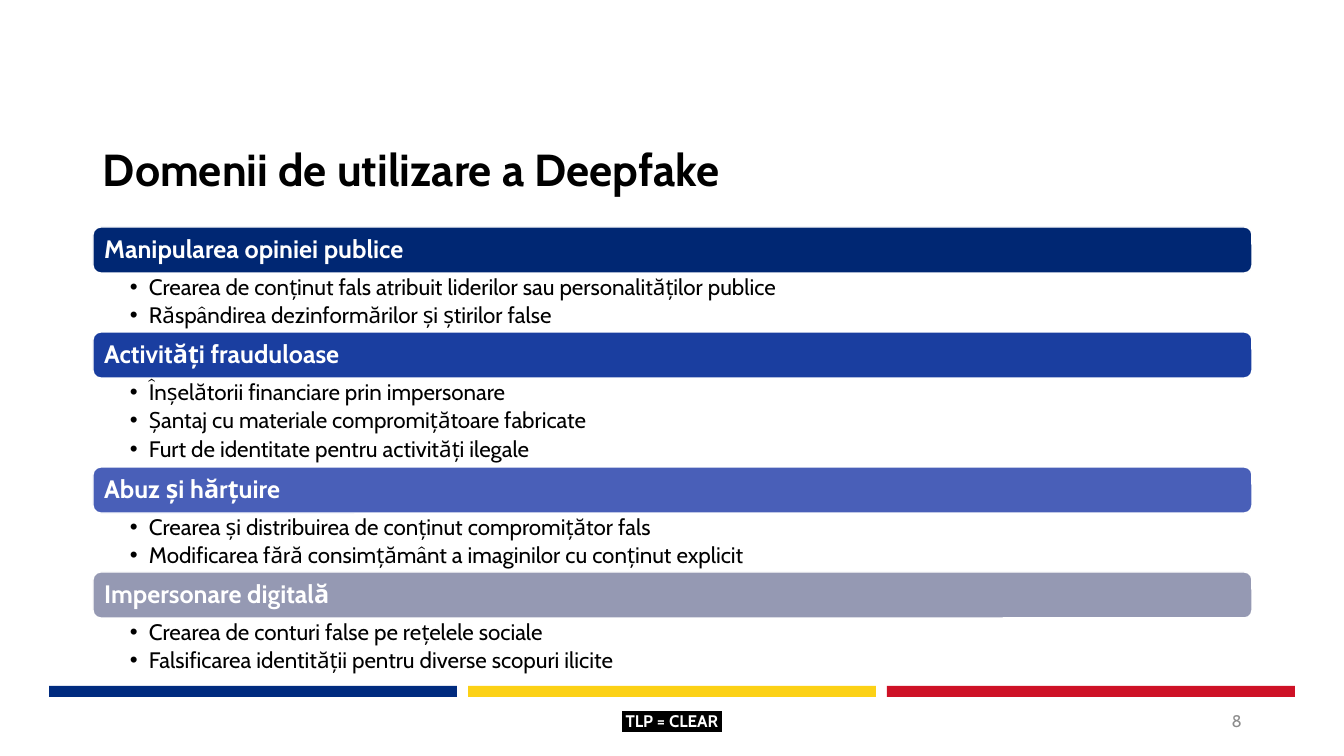
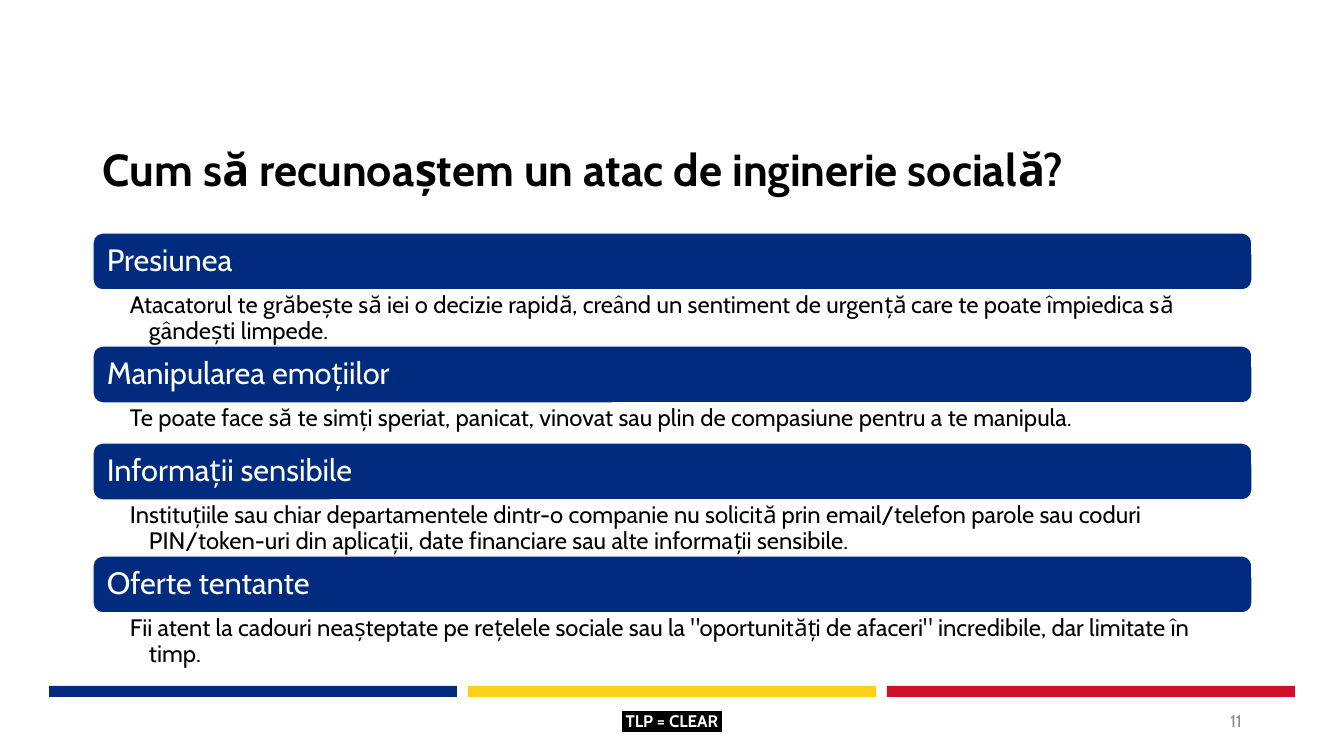
from lxml.etree import SubElement as Sub
from pptx import Presentation
from pptx.dml.color import RGBColor as RGB
from pptx.enum.shapes import MSO_SHAPE as Shape
from pptx.enum.text import MSO_ANCHOR as Anchor, PP_ALIGN as Align
from pptx.oxml import parse_xml
from pptx.oxml.ns import nsdecls, qn
from pptx.util import Emu, Pt

SCALE = 12192000 / 1344
BLUE, WHITE, BLACK, GREY = "002B7F", "FFFFFF", "000000", "8C8C8C"
STRIPES = [BLUE, "FCD116", "CE1126"]
LEFT, WIDE = 93, 1159

DECK = [
    {
        "title": "Domenii de utilizare a Deepfake", "page": "8",
        "top": 227, "band": 46, "inset": 9, "bullet": "•",
        "head": {"size": Pt(18), "bold": True}, "body": {"size": Pt(16)},
        "items": [
            ("Manipularea opiniei publice", "002773", 59, [
                "Crearea de conținut fals atribuit liderilor sau personalităților publice",
                "Răspândirea dezinformărilor și știrilor false"]),
            ("Activități frauduloase", "1A3EA0", 89, [
                "Înșelătorii financiare prin impersonare",
                "Șantaj cu materiale compromițătoare fabricate",
                "Furt de identitate pentru activități ilegale"]),
            ("Abuz și hărțuire", "495FB8", 59, [
                "Crearea și distribuirea de conținut compromițător fals",
                "Modificarea fără consimțământ a imaginilor cu conținut explicit"]),
            ("Impersonare digitală", "9599B3", 59, [
                "Crearea de conturi false pe rețelele sociale",
                "Falsificarea identității pentru diverse scopuri ilicite"]),
        ],
    },
    {
        "title": "Cum să recunoaștem un atac de inginerie socială?", "page": "11",
        "top": 233, "band": 57, "inset": 11, "bullet": None,
        "head": {"size": Pt(22)}, "body": {"size": Pt(17)},
        "items": [
            ("Presiunea", BLUE, 56, [
                "Atacatorul te grăbește să iei o decizie rapidă, creând un sentiment "
                "de urgență care te poate împiedica să gândești limpede."]),
            ("Manipularea emoțiilor", BLUE, 40, [
                "Te poate face să te simți speriat, panicat, vinovat sau plin de "
                "compasiune pentru a te manipula."]),
            ("Informații sensibile", BLUE, 56, [
                "Instituțiile sau chiar departamentele dintr-o companie nu solicită "
                "prin email/telefon parole sau coduri PIN/token-uri din aplicații, "
                "date financiare sau alte informații sensibile."]),
            ("Oferte tentante", BLUE, 56, [
                "Fii atent la cadouri neașteptate pe rețelele sociale sau la "
                "\"oportunități de afaceri\" incredibile, dar limitate în timp."]),
        ],
    },
]


def px(*sizes):
    return [Emu(round(n * SCALE)) for n in sizes]


def write(box, lines, color, font, pad=(10, 5, 10, 5), align=Align.LEFT,
          anchor=Anchor.MIDDLE, spacing=0.9):
    """Fill a shape with paragraphs; pad is left, top, right, bottom in px."""
    frame = box.text_frame
    frame.word_wrap, frame.vertical_anchor = True, anchor
    for side, gap in zip(("left", "top", "right", "bottom"), px(*pad)):
        setattr(frame, "margin_" + side, gap)
    for i, line in enumerate(lines):
        para = frame.add_paragraph() if i else frame.paragraphs[0]
        para.alignment, para.line_spacing = align, spacing
        run = para.add_run()
        run.text = line
        for key, value in ({"name": "Cabin"} | font).items():
            setattr(run.font, key, value)
        run.font.color.rgb = RGB.from_string(color)
    return frame.paragraphs


deck = Presentation()
deck.slide_width, deck.slide_height = px(1344, 756)

for page in DECK:
    slide = deck.slides.add_slide(deck.slide_layouts[6])
    shapes = slide.shapes

    for i, color in enumerate(STRIPES):
        stripe = shapes.add_shape(Shape.RECTANGLE, *px(49 + 419 * i, 686, 408, 11))
        stripe.shadow.inherit = False
        stripe.fill.solid()
        stripe.fill.fore_color.rgb = RGB.from_string(color)
        stripe.line.fill.background()

    title = shapes.add_textbox(*px(LEFT, 149, WIDE, 45))
    write(title, [page["title"]], BLACK, {"size": Pt(32), "bold": True})

    top, high = page["top"], page["band"]
    for head, color, depth, lines in page["items"]:
        band = shapes.add_shape(Shape.ROUNDED_RECTANGLE, *px(LEFT, top, WIDE, high))
        band.shadow.inherit = False
        band.fill.solid()
        band.fill.fore_color.rgb = RGB.from_string(color)
        band.line.color.rgb = RGB.from_string(WHITE)
        band.line.width = Pt(1)
        inset = page["inset"]
        write(band, [head], WHITE, page["head"], (inset, 5, inset, 5))

        body = shapes.add_textbox(*px(LEFT, top + high, WIDE, depth))
        paras = write(body, lines, BLACK, page["body"], (37, 3, 16, 3),
                      anchor=Anchor.TOP)
        for para in paras:
            para.space_after = Pt(3)
            props = para._p.get_or_add_pPr()
            hang = px(19)[0]
            props.set("marL", str(hang))
            props.set("indent", str(-hang))
            if page["bullet"]:
                Sub(props, qn("a:buFont"), typeface="Arial")
                Sub(props, qn("a:buChar"), char=page["bullet"])
        top += high + depth

    label = shapes.add_textbox(*px(445, 701, 454, 40))
    paras = write(label, [" TLP = CLEAR "], WHITE, {"size": Pt(12), "bold": True},
                  align=Align.CENTER, spacing=1.0)
    fill = paras[0].runs[0]._r.rPr.find(qn("a:solidFill"))
    fill.addnext(parse_xml(
        f'<a:highlight {nsdecls("a")}><a:srgbClr val="{BLACK}"/></a:highlight>'))

    number = shapes.add_textbox(*px(950, 701, 302, 40))
    write(number, [page["page"]], GREY, {"size": Pt(12)}, align=Align.RIGHT,
          spacing=1.0)

deck.save("out.pptx")
